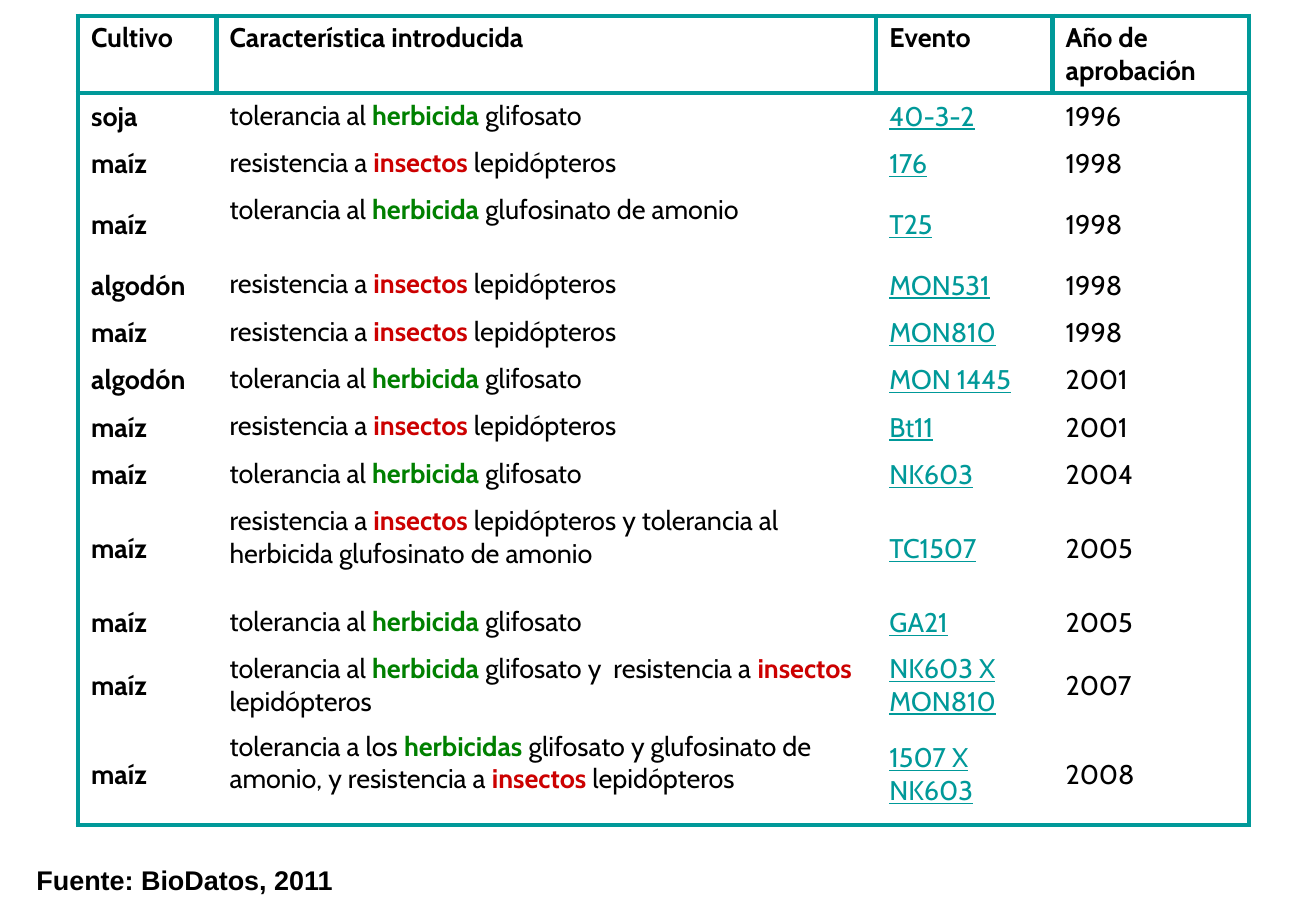
from lxml import etree
from pptx import Presentation
from pptx import util as u
from pptx.dml.color import RGBColor
from pptx.enum import text
from pptx.oxml import ns

COLORS = {"ink": "000000", "teal": "009999", "green": "008000", "red": "CC0000"}
COLUMN_WIDTHS = (1.14, 5.43, 1.45, 1.62)
HEADERS = ("Cultivo", "Característica introducida", "Evento", "Año de aprobación")
HEADER_HEIGHT = 0.61

GLYPHOSATE = "tolerancia al *herbicida* glifosato"
INSECTS = "resistencia a *insectos* lepidópteros"

# Row height, crop, trait (highlighted words between asterisks), event, year
EVENTS = (
    (0.39, "soja", GLYPHOSATE, "40-3-2", "1996"),
    (0.39, "maíz", INSECTS, "176", "1998"),
    (0.61, "maíz", "tolerancia al *herbicida* glufosinato de amonio", "T25", "1998"),
    (0.39, "algodón", INSECTS, "MON531", "1998"),
    (0.39, "maíz", INSECTS, "MON810", "1998"),
    (0.39, "algodón", GLYPHOSATE, "MON 1445", "2001"),
    (0.39, "maíz", INSECTS, "Bt11", "2001"),
    (0.39, "maíz", GLYPHOSATE, "NK603", "2004"),
    (0.83, "maíz", INSECTS + " y tolerancia al herbicida glufosinato de amonio",
     "TC1507", "2005"),
    (0.39, "maíz", GLYPHOSATE, "GA21", "2005"),
    (0.61, "maíz", GLYPHOSATE + " y  " + INSECTS, "NK603 X MON810", "2007"),
    (0.83, "maíz", "tolerancia a los *herbicidas* glifosato y glufosinato de amonio, y "
     + INSECTS, "1507 X NK603", "2008"),
)


def set_font(font, color="ink", bold=False, name="Cabin"):
    font.name = name
    font.size = u.Pt(16)
    font.bold = bold
    font.color.rgb = RGBColor.from_string(COLORS[color])


def set_borders(cell, visible):
    """Draw teal lines on the sides (of L, R, T, B) in visible and none on the rest."""
    tc_pr = cell._tc.get_or_add_tcPr()
    for side in "LRTB":
        ln = etree.SubElement(tc_pr, ns.qn(f"a:ln{side}"))
        if side in visible:
            ln.set("w", str(u.Pt(3)))
            fill = etree.SubElement(ln, ns.qn("a:solidFill"))
            etree.SubElement(fill, ns.qn("a:srgbClr"), val=COLORS["teal"])
        else:
            ln.set("w", "0")
            etree.SubElement(ln, ns.qn("a:noFill"))


def write_trait(p, trait):
    set_font(p.font)
    for i, part in enumerate(trait.split("*")):
        r = p.add_run()
        r.text = part
        if i % 2:
            set_font(r.font, "green" if part.startswith("herbicida") else "red", True)


def format_cell(cell, row, col, last_row):
    """Set borders, fill, margins and anchor from the cell's place in the table."""
    if row == 0:
        visible = "LRTB"
    else:
        visible = (("T" if row == 1 else "") + ("B" if row == last_row else "")
                   + {0: "L", len(HEADERS) - 1: "R"}.get(col, ""))
    set_borders(cell, visible)
    cell.fill.background()
    cell.margin_left = cell.margin_right = u.Inches(0.11)
    cell.margin_top = cell.margin_bottom = u.Inches(0.05)
    top = row == 0 or col == 1
    cell.vertical_anchor = text.MSO_ANCHOR.TOP if top else text.MSO_ANCHOR.MIDDLE


def add_events_table(slide, left, top, width, height):
    rows = ((HEADER_HEIGHT, *HEADERS), *EVENTS)
    table = slide.shapes.add_table(
        len(rows), len(HEADERS), u.Inches(left), u.Inches(top),
        u.Inches(width), u.Inches(height)).table
    table.first_row = table.horz_banding = False
    for column, column_width in zip(table.columns, COLUMN_WIDTHS):
        column.width = u.Inches(column_width)
    for row, (row_height, *values) in enumerate(rows):
        table.rows[row].height = u.Inches(row_height)
        for col, value in enumerate(values):
            cell = table.cell(row, col)
            format_cell(cell, row, col, len(rows) - 1)
            p = cell.text_frame.paragraphs[0]
            if row and col == 1:
                write_trait(p, value)
                continue
            p.text = value
            is_event = row > 0 and col == 2
            set_font(p.font, "teal" if is_event else "ink", row == 0 or col == 0)
            if is_event:
                p.font.underline = True


def add_source(slide, left, top, width, height):
    box = slide.shapes.add_textbox(
        u.Inches(left), u.Inches(top), u.Inches(width), u.Inches(height))
    tf = box.text_frame
    tf.margin_left = tf.margin_right = tf.margin_top = tf.margin_bottom = 0
    tf.word_wrap = False
    tf.auto_size = text.MSO_AUTO_SIZE.SHAPE_TO_FIT_TEXT
    p = tf.paragraphs[0]
    p.text = "Fuente: BioDatos, 2011"
    set_font(p.font, bold=True, name="Arial")


def main():
    prs = Presentation()
    prs.slide_width, prs.slide_height = u.Inches(10.83), u.Inches(7.5)
    slide = prs.slides.add_slide(prs.slide_layouts.get_by_name("Blank"))
    add_events_table(slide, 0.64, 0.13, 9.64, 6.65)
    add_source(slide, 0.3, 7.11, 2.48, 0.27)
    prs.save("out.pptx")


if __name__ == "__main__":
    main()
